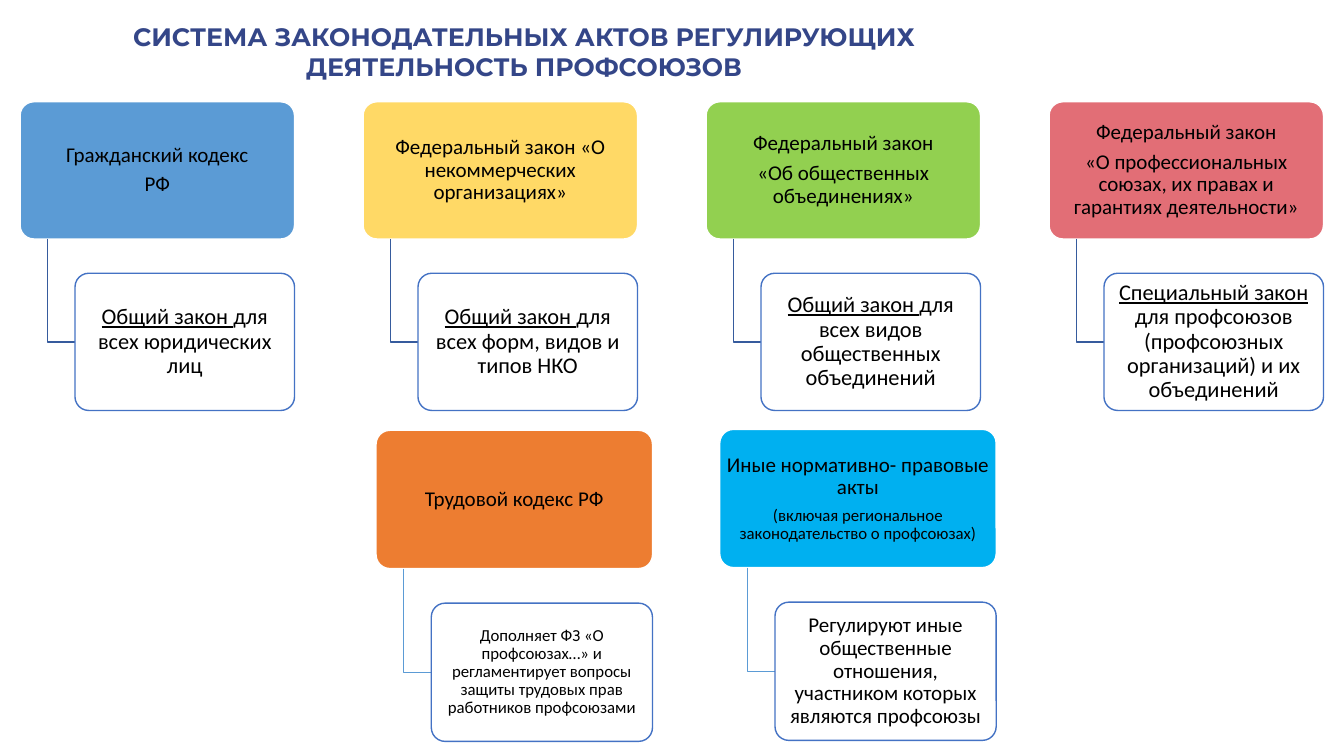
from lxml.etree import SubElement
from pptx import Presentation
from pptx.dml.color import RGBColor
from pptx.enum.shapes import MSO_SHAPE
from pptx.enum.text import MSO_ANCHOR, PP_ALIGN
from pptx.oxml.ns import qn
from pptx.util import Pt

BLACK = RGBColor(0x00, 0x00, 0x00)
WHITE = RGBColor(0xFF, 0xFF, 0xFF)
NAVY = RGBColor(0x34, 0x46, 0x88)
BLUE = RGBColor(0x5B, 0x9B, 0xD5)
YELLOW = RGBColor(0xFF, 0xD9, 0x66)
GREEN = RGBColor(0x92, 0xD0, 0x50)
RED = RGBColor(0xD4, 0x28, 0x34)
ORANGE = RGBColor(0xED, 0x7D, 0x31)
CYAN = RGBColor(0x00, 0xB0, 0xF0)
OUTLINE = RGBColor(0x44, 0x72, 0xC4)
ELBOW = RGBColor(0x36, 0x5B, 0x9D)

TITLE = "СИСТЕМА ЗАКОНОДАТЕЛЬНЫХ АКТОВ РЕГУЛИРУЮЩИХ ДЕЯТЕЛЬНОСТЬ ПРОФСОЮЗОВ"
LEFT, TOP, PITCH, WIDTH = 14.4, 72.7, 245, 196
LOWER_WIDTH = 197.5

LAWS = [
    (BLUE, 100, ["Гражданский кодекс", "РФ"],
     "Общий закон ", "для всех юридических лиц"),
    (YELLOW, 100, ["Федеральный закон «О некоммерческих организациях»"],
     "Общий закон ", "для всех форм, видов и типов НКО"),
    (GREEN, 100, ["Федеральный закон", "«Об общественных объединениях»"],
     "Общий закон ", "для всех видов общественных объединений"),
    (RED, 67, ["Федеральный закон",
               "«О профессиональных союзах, их правах и гарантиях деятельности»"],
     "Специальный закон ",
     "для профсоюзов (профсоюзных организаций) и их объединений"),
]
OTHER_ACTS = [
    (268.6, 307.4, ORANGE, [("Трудовой кодекс РФ", 15)],
     "Дополняет ФЗ «О профсоюзах…» и регламентирует вопросы защиты "
     "трудовых прав работников профсоюзами", 12),
    (514.1, 306.7, CYAN,
     [("Иные нормативно- правовые акты", 15),
      ("(включая региональное законодательство о профсоюзах)", 12)],
     "Регулируют иные общественные отношения, участником которых "
     "являются профсоюзы", 15),
]


def add_title(s):
    """Add the centred heading."""
    sp = s.shapes.add_textbox(Pt(LEFT), Pt(11.5), Pt(720), Pt(51))
    tf = sp.text_frame
    tf.word_wrap = True
    p = tf.paragraphs[0]
    p.text = TITLE
    p.alignment = PP_ALIGN.CENTER
    p.font.name, p.font.size, p.font.bold = "Montserrat", Pt(18), True
    p.font.color.rgb = NAVY


def add_box(s, x, y, w, h, fill, alpha, line, paragraphs):
    """Add a rounded box; each paragraph is (underlined part, rest, size)."""
    sp = s.shapes.add_shape(MSO_SHAPE.ROUNDED_RECTANGLE, Pt(x), Pt(y), Pt(w), Pt(h))
    sp.adjustments[0] = 0.1
    sp.shadow.inherit = False
    sp.fill.solid()
    sp.fill.fore_color.rgb = fill
    if alpha < 100:
        color = sp.fill._xPr.find(qn("a:solidFill"))[0]
        SubElement(color, qn("a:alpha")).set("val", str(alpha * 1000))
    sp.line.color.rgb = line
    sp.line.width = Pt(1)
    tf = sp.text_frame
    tf.word_wrap = True
    tf.vertical_anchor = MSO_ANCHOR.MIDDLE
    tf.margin_left = tf.margin_right = Pt(2.2)
    tf.margin_top = tf.margin_bottom = Pt(1.4)
    for i, (underlined, rest, size) in enumerate(paragraphs):
        p = tf.paragraphs[0] if i == 0 else tf.add_paragraph()
        p.alignment = PP_ALIGN.CENTER
        p.line_spacing = 0.9
        p.space_after = Pt(5 if i < len(paragraphs) - 1 else 0)
        p.font.name, p.font.size = "Calibri", Pt(size)
        p.font.color.rgb = BLACK
        if underlined:
            r = p.add_run()
            r.text = underlined
            r.font.underline = True
        p.add_run().text = rest


def add_elbow(s, x, top, right, bottom, color):
    """Add an open elbow line going down and then right."""
    builder = s.shapes.build_freeform(Pt(x), Pt(top))
    builder.add_line_segments([(Pt(x), Pt(bottom)), (Pt(right), Pt(bottom))], close=False)
    sp = builder.convert_to_shape()
    sp.shadow.inherit = False
    sp.fill.background()
    sp.line.color.rgb = color
    sp.line.width = Pt(1)


def add_branch(s, x, y, w, fill, alpha, elbow, act, note):
    """Add an act, the note below it and the elbow that joins them."""
    h = w / 2
    note_x, note_y = x + 0.2 * w, y + 1.25 * h
    add_box(s, x, y, w, h, fill, alpha, WHITE, act)
    add_elbow(s, x + 0.1 * w, y + h, note_x, note_y + h / 2, elbow)
    add_box(s, note_x, note_y, 0.8 * w, h, WHITE, 90, OUTLINE, [note])


def main():
    """Build and save the slide."""
    prs = Presentation()
    prs.slide_width, prs.slide_height = Pt(960), Pt(540)
    s = prs.slides.add_slide(prs.slide_layouts[6])
    add_title(s)
    for i, (fill, alpha, lines, kind, scope) in enumerate(LAWS):
        act = [("", text, 15) for text in lines]
        add_branch(s, LEFT + i * PITCH, TOP, WIDTH, fill, alpha, ELBOW,
                   act, (kind, scope, 16))
    for x, y, fill, lines, note, size in OTHER_ACTS:
        act = [("", text, text_size) for text, text_size in lines]
        add_branch(s, x, y, LOWER_WIDTH, fill, 100, BLUE, act, ("", note, size))
    prs.save("out.pptx")


if __name__ == "__main__":
    main()
